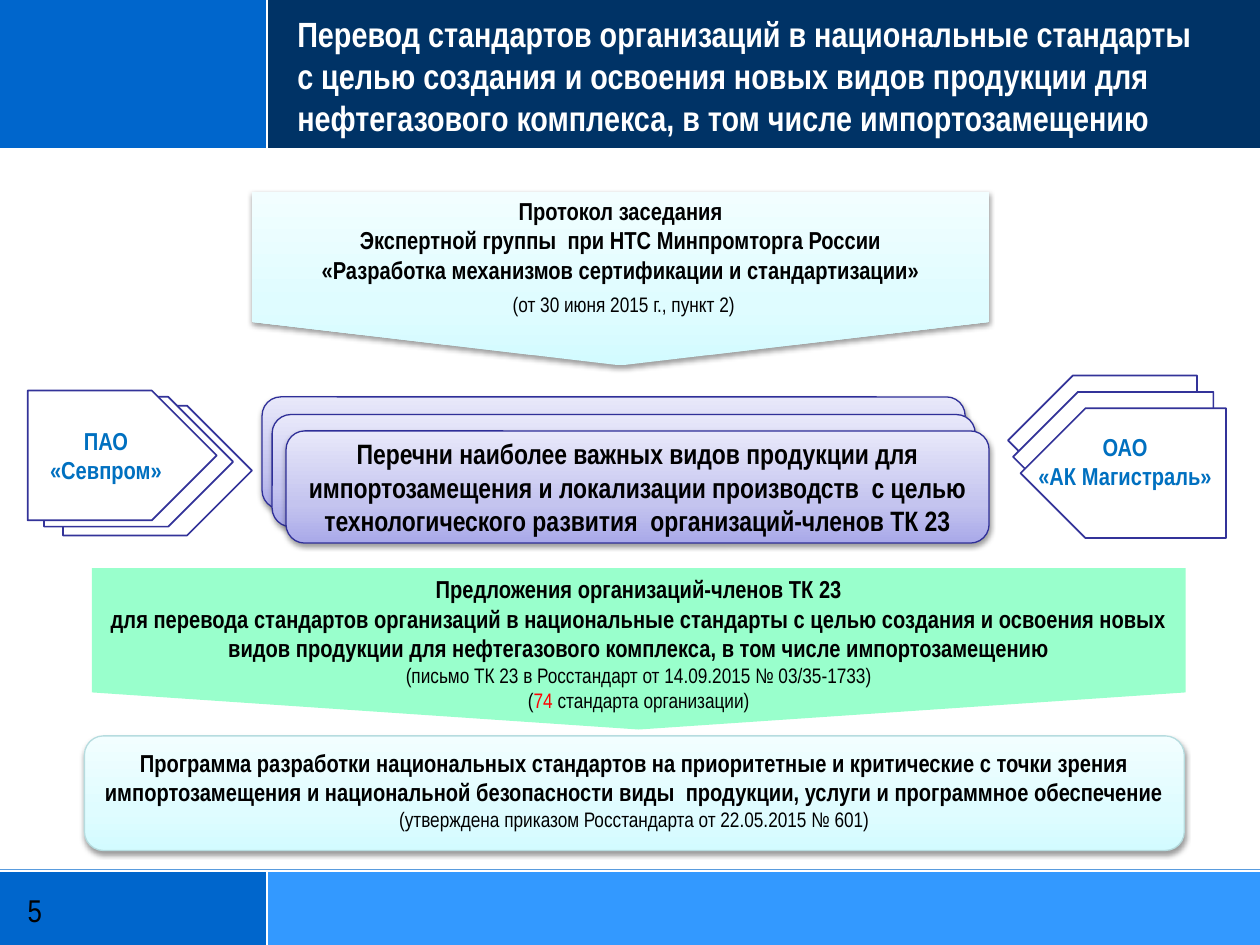
"""Build the slide on turning company standards into national standards."""
from copy import deepcopy
from dataclasses import dataclass
from typing import Optional

from lxml.etree import SubElement
from pptx import Presentation
from pptx.dml.color import RGBColor
from pptx.enum.shapes import MSO_CONNECTOR, MSO_SHAPE as Preset
from pptx.enum.text import MSO_ANCHOR as Anchor, PP_ALIGN as Align
from pptx.oxml.ns import qn
from pptx.util import Inches, Pt

FONT = "Arial Narrow"
BLACK = RGBColor(0x00, 0x00, 0x00)
WHITE = RGBColor(0xFF, 0xFF, 0xFF)
RED = RGBColor(0xFF, 0x00, 0x00)
BLUE = RGBColor(0x00, 0x66, 0xCC)
NAVY = RGBColor(0x00, 0x33, 0x66)
SKY = RGBColor(0x33, 0x99, 0xFF)
MINT = RGBColor(0x99, 0xFF, 0xCC)
INDIGO = RGBColor(0x33, 0x33, 0x99)
VIOLET_EDGE = RGBColor(0x2F, 0x2F, 0x98)
AQUA_EDGE = RGBColor(0xB6, 0xDC, 0xDF)
COMPANY_BLUE = RGBColor(0x00, 0x70, 0xC0)
AQUA = (RGBColor(0xD3, 0xFB, 0xFF), RGBColor(0xDF, 0xFC, 0xFF), RGBColor(0xF2, 0xFE, 0xFF))
VIOLET = (RGBColor(0xA9, 0xA9, 0xE9), RGBColor(0xC4, 0xC4, 0xEF), RGBColor(0xE8, 0xE8, 0xFA))
STOPS = (0, 0.35, 1)


@dataclass(frozen=True)
class Span:
    text: str
    size: Optional[float] = None
    bold: Optional[bool] = None
    color: Optional[RGBColor] = None


@dataclass(frozen=True)
class Line:
    spans: tuple[Span, ...]
    size: float = 14
    bold: bool = True
    color: RGBColor = BLACK
    align: Align = Align.CENTER


@dataclass(frozen=True)
class Block:
    preset: Preset
    box: tuple[float, float, float, float]
    fill: RGBColor | tuple[RGBColor, ...]
    edge: Optional[RGBColor] = None
    edge_width: float = 0.75
    rotation: float = 0
    adjustments: tuple[float, ...] = ()
    lines: tuple[Line, ...] = ()
    anchor: Anchor = Anchor.MIDDLE


TITLE = Line((Span("Перевод стандартов организаций в национальные стандарты\v"
                   "с целью создания и освоения новых видов продукции для "
                   "нефтегазового комплекса, в том числе импортозамещению"),),
             20, color=WHITE, align=Align.LEFT)
PROTOCOL = Line((
    Span("Протокол заседания\vЭкспертной группы  при НТС Минпромторга России\v"
         "«Разработка механизмов сертификации и стандартизации»\v"),
    Span(" ", 16),
    Span("(от 30 июня 2015\u00a0г., пункт\u00a02)", 12, False)))
PRODUCT_LISTS = Line((Span("Перечни наиболее важных видов продукции для импортозамещения "
                           "и локализации производств  с целью технологического развития  "
                           "организаций-членов ТК 23"),), 16)
PROPOSALS = (
    Line((Span("Предложения организаций-членов ТК 23"),)),
    Line((Span("для перевода стандартов организаций в национальные стандарты с целью "
               "создания и освоения новых видов продукции для нефтегазового комплекса, "
               "в том числе импортозамещению"),)),
    Line((Span("(письмо ТК 23 в Росстандарт от 14.09.2015 № 03/35-1733)"),), 12, False),
    Line((Span("("), Span("74", color=RED), Span(" стандарта организации)")), 12, False))
PROGRAMME = Line((
    Span("Программа разработки национальных стандартов на приоритетные и критические "
         "с точки зрения импортозамещения и национальной безопасности виды  продукции, "
         "услуги и программное обеспечение "),
    Span("(утверждена приказом Росстандарта от 22.05.2015 № 601)", 12, False)))
GAS_COMPANY = Line((Span("ПАО «Севпром»"),), color=COMPANY_BLUE)
PIPELINE_COMPANY = (Line((Span("ОАО"),), color=COMPANY_BLUE),
                    Line((Span("«АК Магистраль»"),), color=COMPANY_BLUE))

BANDS = (
    Block(Preset.RECTANGLE, (2.12, 6.91, 7.88, 0.59), SKY),
    Block(Preset.RECTANGLE, (0, 0, 2.12, 1.18), BLUE),
    Block(Preset.RECTANGLE, (2.12, 0, 7.88, 1.18), NAVY),
    Block(Preset.RECTANGLE, (0, 1.19, 10, 5.71), WHITE))
RULES = ((2.12, 6.91, 2.12, 7.5), (2.12, 0, 2.12, 1.18),
         (0, 6.91, 10, 6.91), (0, 1.18, 10, 1.18))
LIST_CARDS = tuple(
    Block(Preset.ROUNDED_RECTANGLE, (left, top, 5.58, 0.89), VIOLET, VIOLET_EDGE, lines=lines)
    for left, top, lines in ((2.08, 3.15, ()), (2.16, 3.29, ()), (2.27, 3.42, (PRODUCT_LISTS,))))
GAS_CARDS = tuple(
    Block(Preset.PENTAGON, (left, top, 1.5, 1.03), WHITE, INDIGO, 1, lines=lines)
    for left, top, lines in ((0.5, 3.22, ()), (0.35, 3.15, ()), (0.22, 3.1, (GAS_COMPANY,))))
PIPELINE_CARDS = tuple(
    Block(Preset.PENTAGON, (left, top, width, 1.03), WHITE, INDIGO, 1, rotation=180)
    for left, top, width in ((8, 2.98, 1.5), (8.04, 3.11, 1.59), (8.1, 3.24, 1.63)))
BLOCKS = (
    Block(Preset.DOWN_ARROW_CALLOUT, (2, 1.52, 5.85, 1.38), AQUA,
          adjustments=(1.36, 2.126, 0.25, 0.75), lines=(PROTOCOL,)),
    Block(Preset.ROUNDED_RECTANGLE, (0.67, 5.84, 8.73, 0.91), AQUA, AQUA_EDGE,
          lines=(PROGRAMME,), anchor=Anchor.TOP),
    *LIST_CARDS, *GAS_CARDS,
    Block(Preset.PENTAGON, (4.43, 0.81, 1.28, 8.68), MINT, rotation=90,
          adjustments=(0.23,), lines=PROPOSALS, anchor=Anchor.TOP),
    *PIPELINE_CARDS)


def write_lines(frame, lines: tuple[Line, ...], anchor: Anchor) -> None:
    frame.word_wrap = True
    frame.vertical_anchor = anchor
    for index, line in enumerate(lines):
        paragraph = frame.add_paragraph() if index else frame.paragraphs[0]
        paragraph.alignment = line.align
        font = paragraph.font
        font.name, font.size, font.bold = FONT, Pt(line.size), line.bold
        font.color.rgb = line.color
        for span in line.spans:
            for part_index, part in enumerate(span.text.split("\v")):
                if part_index:
                    paragraph.add_line_break()
                if not part:
                    continue
                run = paragraph.add_run()
                run.text = part
                if span.size is not None:
                    run.font.size = Pt(span.size)
                if span.bold is not None:
                    run.font.bold = span.bold
                if span.color is not None:
                    run.font.color.rgb = span.color


def paint_gradient(shape, colors: tuple[RGBColor, ...]) -> None:
    shape.fill.gradient()
    shape.fill.gradient_angle = 90
    stop_list = shape._element.spPr.find(".//" + qn("a:gsLst"))
    stop_list.append(deepcopy(stop_list[-1]))
    for stop, position, color in zip(shape.fill.gradient_stops, STOPS, colors):
        stop.position = position
        stop.color.rgb = color


def add_soft_shadow(shape) -> None:
    effects = shape._element.spPr.find(qn("a:effectLst"))
    shadow = SubElement(effects, qn("a:outerShdw"), blurRad=str(Pt(3.1)), dist=str(Pt(1.6)),
                        dir="5400000", rotWithShape="0")
    SubElement(SubElement(shadow, qn("a:srgbClr"), val="000000"), qn("a:alpha"), val="38000")


def draw_block(slide, block: Block) -> None:
    shape = slide.shapes.add_shape(block.preset, *map(Inches, block.box))
    shape.rotation = block.rotation
    for index, value in enumerate(block.adjustments):
        shape.adjustments[index] = value
    shape.shadow.inherit = False
    if isinstance(block.fill, RGBColor):
        shape.fill.solid()
        shape.fill.fore_color.rgb = block.fill
    else:
        paint_gradient(shape, block.fill)
        add_soft_shadow(shape)
    if block.edge is None:
        shape.line.fill.background()
    else:
        shape.line.color.rgb = block.edge
        shape.line.width = Pt(block.edge_width)
    if block.lines:
        write_lines(shape.text_frame, block.lines, block.anchor)
        if block.rotation == 90:
            shape.text_frame._txBody.bodyPr.set("vert", "vert270")


def draw_rule(slide, ends: tuple[float, float, float, float]) -> None:
    rule = slide.shapes.add_connector(MSO_CONNECTOR.STRAIGHT, *map(Inches, ends))
    rule.line.color.rgb = WHITE
    rule.line.width = Pt(1.25)
    SubElement(rule._element.spPr, qn("a:effectLst"))


def draw_text(slide, box: tuple[float, float, float, float], lines: tuple[Line, ...],
              anchor: Anchor, inset: bool = False) -> None:
    frame = slide.shapes.add_textbox(*map(Inches, box)).text_frame
    if not inset:
        frame.margin_left = frame.margin_right = frame.margin_top = frame.margin_bottom = 0
    write_lines(frame, lines, anchor)


def main() -> None:
    deck = Presentation()
    deck.slide_width, deck.slide_height = Inches(10), Inches(7.5)
    slide = deck.slides.add_slide(deck.slide_layouts[6])
    slide.background.fill.solid()
    slide.background.fill.fore_color.rgb = BLUE
    for band in BANDS:
        draw_block(slide, band)
    for ends in RULES:
        draw_rule(slide, ends)
    draw_text(slide, (2.36, 0, 7.64, 1.1), (TITLE,), Anchor.BOTTOM)
    page_number = Line((Span("5"),), 18, False, align=Align.LEFT)
    draw_text(slide, (0.22, 6.96, 1.63, 0.52), (page_number,), Anchor.MIDDLE)
    for block in BLOCKS:
        draw_block(slide, block)
    draw_text(slide, (8.06, 3.38, 1.74, 0.57), PIPELINE_COMPANY, Anchor.TOP, inset=True)
    deck.save("out.pptx")


if __name__ == "__main__":
    main()
